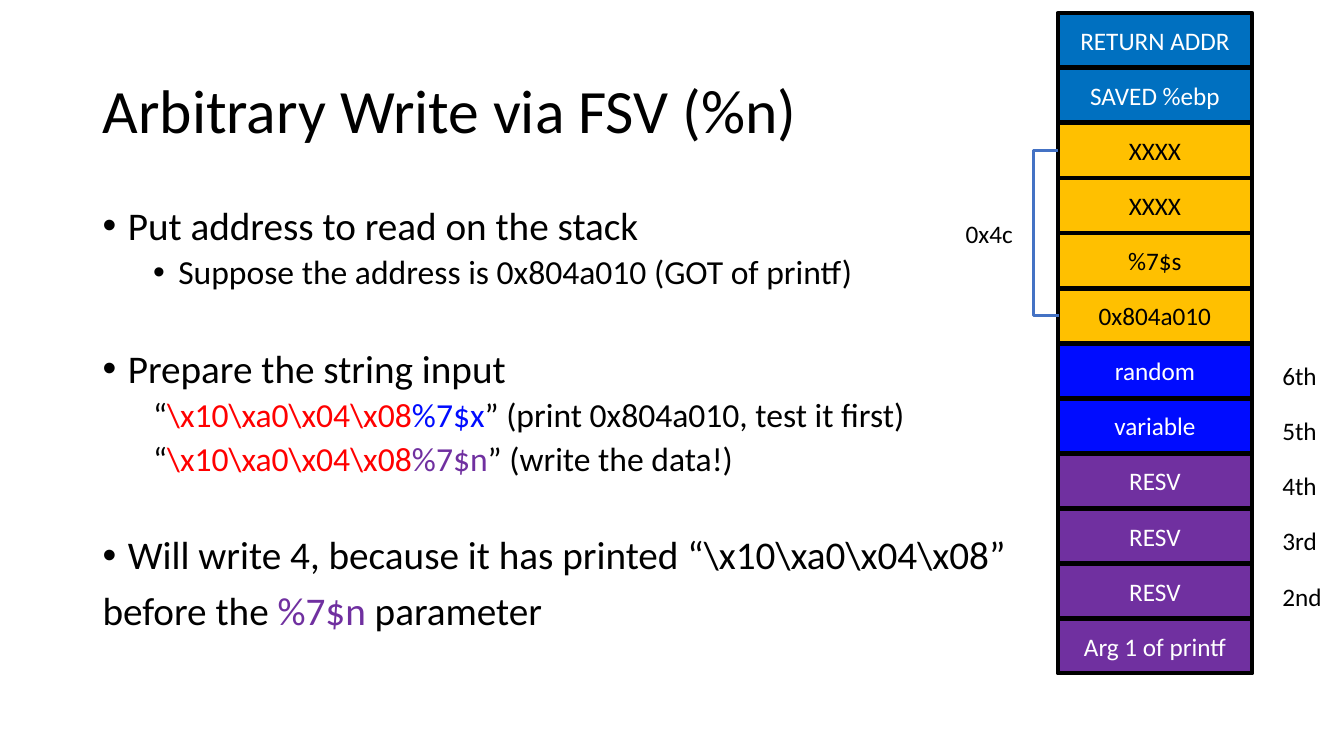
from lxml import etree
from pptx import Presentation, util as u
from pptx.dml.color import RGBColor
from pptx.enum import shapes, text
from pptx.oxml.ns import qn

BLACK = RGBColor(0x00, 0x00, 0x00)
WHITE = RGBColor(0xFF, 0xFF, 0xFF)
RED = RGBColor(0xFF, 0x00, 0x00)
BLUE = RGBColor(0x00, 0x0C, 0xFF)
PURPLE = RGBColor(0x70, 0x30, 0xA0)
SKY = RGBColor(0x00, 0x70, 0xC0)
AMBER = RGBColor(0xFF, 0xC0, 0x00)
BRACKET = RGBColor(0x44, 0x72, 0xC4)

TITLE = "Arbitrary Write via FSV (%n)"
ADDRESS = (r"\x10\xa0\x04\x08", RED)

# Style: size, space before, left margin, first-line indent
STYLES = {
    "point": (28, 10, 0.25, -0.25),
    "new point": (28, 41, 0.25, -0.25),
    "detail": (24, 5, 0.75, -0.25),
    "payload": (24, 5, 0.5, 0),
    "plain": (28, 10, 0, 0),
}
BODY = [
    ("point", [("Put address to read on the stack", BLACK)]),
    ("detail", [("Suppose the address is 0x804a010 (GOT of printf)", BLACK)]),
    ("new point", [("Prepare the string input", BLACK)]),
    ("payload", [("“", BLACK), ADDRESS, ("%7$x", BLUE),
                 ("” (print 0x804a010, test it first)", BLACK)]),
    ("payload", [("“", BLACK), ADDRESS, ("%7$n", PURPLE),
                 ("” (write the data!)", BLACK)]),
    ("new point", [(r"Will write 4, because it has printed “\x10\xa0\x04\x08”", BLACK)]),
    ("plain", [("before the ", BLACK), ("%7$n", PURPLE), (" parameter", BLACK)]),
]

# Stack cells from the top: text, fill, font colour, argument position
STACK = [
    ("RETURN ADDR", SKY, WHITE, ""),
    ("SAVED %ebp", SKY, WHITE, ""),
    ("XXXX", AMBER, BLACK, ""),
    ("XXXX", AMBER, BLACK, ""),
    ("%7$s", AMBER, BLACK, ""),
    ("0x804a010", AMBER, BLACK, ""),
    ("random", BLUE, WHITE, "6th"),
    ("variable", BLUE, WHITE, "5th"),
    ("RESV", PURPLE, WHITE, "4th"),
    ("RESV", PURPLE, WHITE, "3rd"),
    ("RESV", PURPLE, WHITE, "2nd"),
    ("Arg 1 of printf", PURPLE, WHITE, ""),
]
BUFFER_FIRST, BUFFER_LAST, BUFFER_SIZE = 2, 5, "0x4c"

STACK_LEFT, STACK_TOP = 10.49, 0.13
CELL_WIDTH, CELL_HEIGHT = 1.93, 0.54
ROW_PITCH = (6.14 - STACK_TOP) / (len(STACK) - 1)
BRACKET_DEPTH, BRACKET_SKEW = 0.25, 0.01


def row_top(row):
    return STACK_TOP + row * ROW_PITCH


def set_font(font, size, color):
    font.name, font.size = "Calibri", u.Pt(size)
    font.color.rgb = color


def add_text_frame(slide, left, top, width, height, wrap):
    box = slide.shapes.add_textbox(*map(u.Inches, (left, top, width, height)))
    box.text_frame.word_wrap = wrap
    return box.text_frame


def add_label(slide, label, left, top, width):
    frame = add_text_frame(slide, left, top, width, 0.4, False)
    frame.auto_size = text.MSO_AUTO_SIZE.SHAPE_TO_FIT_TEXT
    frame.text = label
    set_font(frame.paragraphs[0].font, 18, BLACK)


def add_title(slide):
    frame = add_text_frame(slide, 0.92, 0.4, 11.5, 1.45, True)
    frame.vertical_anchor = text.MSO_ANCHOR.MIDDLE
    frame.text = TITLE
    frame.paragraphs[0].line_spacing = 0.9
    set_font(frame.paragraphs[0].font, 44, BLACK)


def add_body(slide):
    frame = add_text_frame(slide, 0.92, 2, 11.5, 4.76, True)
    for number, (style, runs) in enumerate(BODY):
        paragraph = frame.add_paragraph() if number else frame.paragraphs[0]
        size, before, margin, indent = STYLES[style]
        paragraph.line_spacing = 0.9
        paragraph.space_before = u.Pt(before)
        properties = paragraph._p.get_or_add_pPr()
        properties.set("marL", str(u.Inches(margin)))
        properties.set("indent", str(u.Inches(indent)))
        if indent:
            etree.SubElement(properties, qn("a:buFont")).set("typeface", "Arial")
            etree.SubElement(properties, qn("a:buChar")).set("char", "•")
        for words, color in runs:
            run = paragraph.add_run()
            run.text = words
            set_font(run.font, size, color)


def add_stack(slide):
    for row, (words, fill, color, position) in enumerate(STACK):
        cell = slide.shapes.add_shape(
            shapes.MSO_SHAPE.RECTANGLE,
            *map(u.Inches, (STACK_LEFT, row_top(row), CELL_WIDTH, CELL_HEIGHT)))
        cell.shadow.inherit = False
        cell.fill.solid()
        cell.fill.fore_color.rgb = fill
        cell.line.color.rgb = BLACK
        cell.line.width = u.Pt(3)
        frame = cell.text_frame
        frame.vertical_anchor = text.MSO_ANCHOR.MIDDLE
        frame.text = words
        frame.paragraphs[0].alignment = text.PP_ALIGN.CENTER
        set_font(frame.paragraphs[0].font, 18, color)
        if position:
            add_label(slide, position, 12.62, row_top(row) + 0.12, 0.6)


def add_buffer_bracket(slide):
    """Bracket the buffer cells on their left, with the buffer's size beside it."""
    first, last = (row_top(row) + CELL_HEIGHT / 2 for row in (BUFFER_FIRST, BUFFER_LAST))
    bracket = slide.shapes.add_connector(
        shapes.MSO_CONNECTOR.ELBOW,
        *map(u.Inches, (STACK_LEFT + BRACKET_SKEW, last, STACK_LEFT, first)))
    bracket.line.color.rgb = BRACKET
    bracket.line.width = u.Pt(2)
    properties = bracket._element.spPr
    etree.SubElement(properties, qn("a:effectLst"))
    bend = etree.SubElement(properties.find(qn("a:prstGeom")).get_or_add_avLst(), qn("a:gd"))
    bend.set("name", "adj1")
    bend.set("fmla", f"val {round(BRACKET_DEPTH / BRACKET_SKEW * 100000)}")
    add_label(slide, BUFFER_SIZE, 9.48, (first + last) / 2 - 0.2, 0.67)


def main():
    deck = Presentation()
    deck.slide_width, deck.slide_height = u.Inches(13.33), u.Inches(7.5)
    slide = deck.slides.add_slide(deck.slide_layouts[6])
    add_title(slide)
    add_body(slide)
    add_stack(slide)
    add_buffer_bracket(slide)
    deck.save("out.pptx")


if __name__ == "__main__":
    main()
